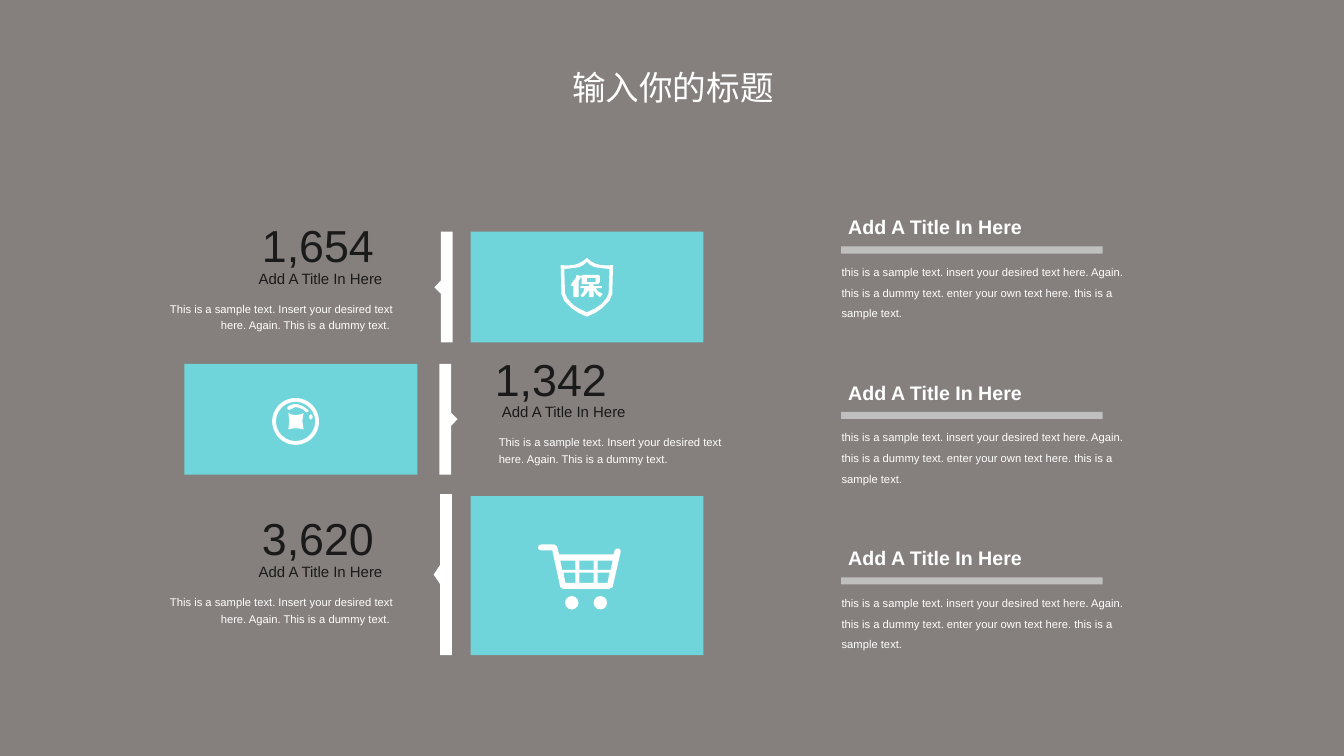
from dataclasses import dataclass

from lxml.etree import SubElement
from pptx import Presentation
from pptx.dml.color import RGBColor
from pptx.enum.shapes import MSO_SHAPE
from pptx.enum.text import MSO_AUTO_SIZE, PP_ALIGN
from pptx.oxml.ns import qn
from pptx.util import Cm, Pt


@dataclass(frozen=True)
class Theme:
    back: str = "85807D"
    card: str = "6FD5DA"
    rule: str = "BFBFBF"
    white: str = "FFFFFF"
    ink: str = "1A1A1A"
    latin: str = "Arial"
    asian: str = "Noto Sans CJK SC"
    title: float = 24
    figure: float = 32
    head: float = 14
    label: float = 10.7
    body: float = 8


THEME = Theme()
LABEL = "Add A Title In Here"
FACT = "This is a sample text. Insert your desired text here. Again. This is a dummy text."
NOTE = ("this is a sample text. insert your desired text here. Again. this is a dummy text. "
        "enter your own text here. this is a sample text.")
ROWS = [5.84, 9.17, 12.45]

SHIELD = [(64, 0), (75, 9), (87, 15), (99, 18), (115, 19), (130, 18), (128, 91),
          (121, 108), (102, 127), (84, 139), (64, 148)]
INNER = [(64, 10), (73, 18), (83, 23), (95, 25), (121, 28), (119, 89),
         (113, 102), (100, 117), (85, 127), (64, 137)]
LEFT = [(51, 46), (38, 43), (36, 51), (30, 58), (23, 69), (25, 71), (30, 70),
        (30, 99), (43, 99), (43, 58), (48, 51)]
RIGHT = [(51, 43), (95, 43), (97, 48), (97, 61), (92, 66), (81, 66), (81, 71),
         (102, 71), (102, 76), (86, 76), (92, 84), (104, 91), (97, 99), (88, 92),
         (81, 81), (81, 99), (69, 99), (69, 81), (60, 93), (53, 99), (48, 95),
         (55, 86), (58, 76), (48, 76), (48, 71), (69, 71), (69, 66), (51, 66)]
MOUTH = [(64, 50), (86, 50), (86, 61), (64, 61)]
CART = [(8, 0), (41, 0), (48, 5), (53, 25), (190, 25), (193, 15), (197, 11),
        (203, 10), (208, 14), (208, 20), (188, 107), (180, 112), (63, 112),
        (56, 107), (36, 15), (8, 15), (2, 13), (0, 8), (2, 2)]
PANES = [[(56, 41), (94, 41), (94, 64), (61, 64)],
         [(64, 71), (94, 71), (94, 97), (69, 97)]]
MIDS = [[(104, top), (140, top), (140, end), (104, end)]
        for top, end in [(41, 64), (71, 97)]]
CORE = [(41, 79), (50, 77), (59, 76), (69, 77), (79, 79), (76, 58), (79, 38),
        (69, 42), (59, 43), (50, 42), (41, 38), (43, 58)]
SHINE = [(38, 23), (46, 18), (56, 15), (65, 16), (76, 20), (91, 30), (91, 35),
         (86, 36), (76, 28), (66, 24), (58, 23), (43, 30), (38, 28)]


def tune(item, form):
    for name, value in form.items():
        setattr(item, name, value)


def paint(shape, color):
    shape.shadow.inherit = False
    shape.fill.solid()
    shape.fill.fore_color.rgb = RGBColor.from_string(color)
    shape.line.fill.background()


def block(slide, box, color, kind=MSO_SHAPE.RECTANGLE):
    shape = slide.shapes.add_shape(kind, *map(Cm, box))
    paint(shape, color)
    return shape


def draw(slide, left, top, loops):
    pen = slide.shapes.build_freeform(*loops[0][0], scale=Cm(0.01))
    for loop in loops:
        if loop is not loops[0]:
            pen.move_to(*loop[0])
        pen.add_line_segments(loop[1:], close=True)
    shape = pen.convert_to_shape(Cm(left), Cm(top))
    paint(shape, THEME.white)
    return shape


def write(slide, box, words, size, color, bold=False, align=PP_ALIGN.LEFT,
          space=None, wrap=True, face=THEME.latin):
    frame = slide.shapes.add_textbox(*map(Cm, box)).text_frame
    tune(frame, {"word_wrap": wrap, "auto_size": MSO_AUTO_SIZE.SHAPE_TO_FIT_TEXT})
    para = frame.paragraphs[0]
    tune(para, {"alignment": align, "line_spacing": space and Pt(space)})
    run = para.add_run()
    run.text = words
    tune(run.font, {"size": Pt(size), "bold": bold, "name": face})
    run.font.color.rgb = RGBColor.from_string(color)
    SubElement(run.font._element, qn("a:ea")).set("typeface", face)


def flip(loop, axis):
    return [(2 * axis - x, y) for x, y in reversed(loop)]


def marker(slide, left, top, high, turn=0):
    full = round(high * 100)
    notch = [(16, round(full * 0.56)), (0, round(full * 0.5)), (16, round(full * 0.44))]
    shape = draw(slide, left, top, [[(16, 0), (46, 0), (46, full), (16, full), *notch]])
    shape.rotation = turn


def fact(slide, top, figure, lefts, words, align):
    num, cap, text = lefts
    write(slide, (text, top + 2.04, 6.15, 1.12), words, THEME.body, THEME.white,
          align=align, space=12)
    write(slide, (cap, top + 1.33, 4.04, 0.69), LABEL, THEME.label, THEME.ink, space=12)
    write(slide, (num, top, 3.35, 1.63), figure, THEME.figure, THEME.ink, wrap=False)


def note(slide, top):
    write(slide, (19.69, top, 6.32, 0.84), LABEL, THEME.head, THEME.white,
          bold=True, align=PP_ALIGN.RIGHT, space=16)
    write(slide, (20.96, top + 1.05, 7.67, 1.85), NOTE, THEME.body, THEME.white, space=14.7)
    block(slide, (21.2, top + 0.88, 6.59, 0.18), THEME.rule)


def shield(slide, left, top):
    rims = [half + flip(half[1:-1], 64) for half in (SHIELD, INNER)]
    draw(slide, left, top, [*rims, LEFT, RIGHT, MOUTH])


def cart(slide, left, top):
    panes = PANES + MIDS + [flip(pane, 122) for pane in PANES]
    draw(slide, left, top, [CART, *panes])
    for side in (0.68, 1.4):
        block(slide, (left + side, top + 1.3, 0.34, 0.34), THEME.white, MSO_SHAPE.OVAL)


def coin(slide, left, top):
    ring = block(slide, (left, top, 1.18, 1.18), THEME.white, MSO_SHAPE.DONUT)
    ring.adjustments[0] = 0.08
    draw(slide, left, top, [CORE, SHINE])
    block(slide, (left + 0.93, top + 0.41, 0.09, 0.13), THEME.white, MSO_SHAPE.OVAL)


def main():
    deck = Presentation()
    tune(deck, {"slide_width": Cm(33.87), "slide_height": Cm(19.05)})
    slide = deck.slides.add_slide(deck.slide_layouts[6])
    block(slide, (0, 0, 33.87, 19.05), THEME.back)
    write(slide, (14.17, 1.57, 6.71, 1.27), "输入你的标题", THEME.title, THEME.white,
          face=THEME.asian)

    marker(slide, 10.95, ROWS[0], 2.79)
    marker(slide, 11.07, ROWS[1], 2.79, 180)
    marker(slide, 10.93, ROWS[2], 4.06)

    outer = (6.35, 6.27, 4.01)
    fact(slide, 5.36, "1,654", outer, FACT + " ", PP_ALIGN.RIGHT)
    fact(slide, 8.73, "1,342", (12.22, 12.4, 12.32), FACT, PP_ALIGN.LEFT)
    fact(slide, 12.75, "3,620", outer, FACT + " ", PP_ALIGN.RIGHT)

    for step in range(3):
        note(slide, 5.33 + 4.17 * step)

    for left, top, high in [(11.86, ROWS[0], 2.79), (11.86, 12.5, 4.01), (4.65, ROWS[1], 2.79)]:
        block(slide, (left, top, 5.87, high), THEME.card)
    shield(slide, 14.15, 6.5)
    cart(slide, 13.56, 13.72)
    coin(slide, 6.86, 10.03)
    deck.save("out.pptx")


if __name__ == "__main__":
    main()
